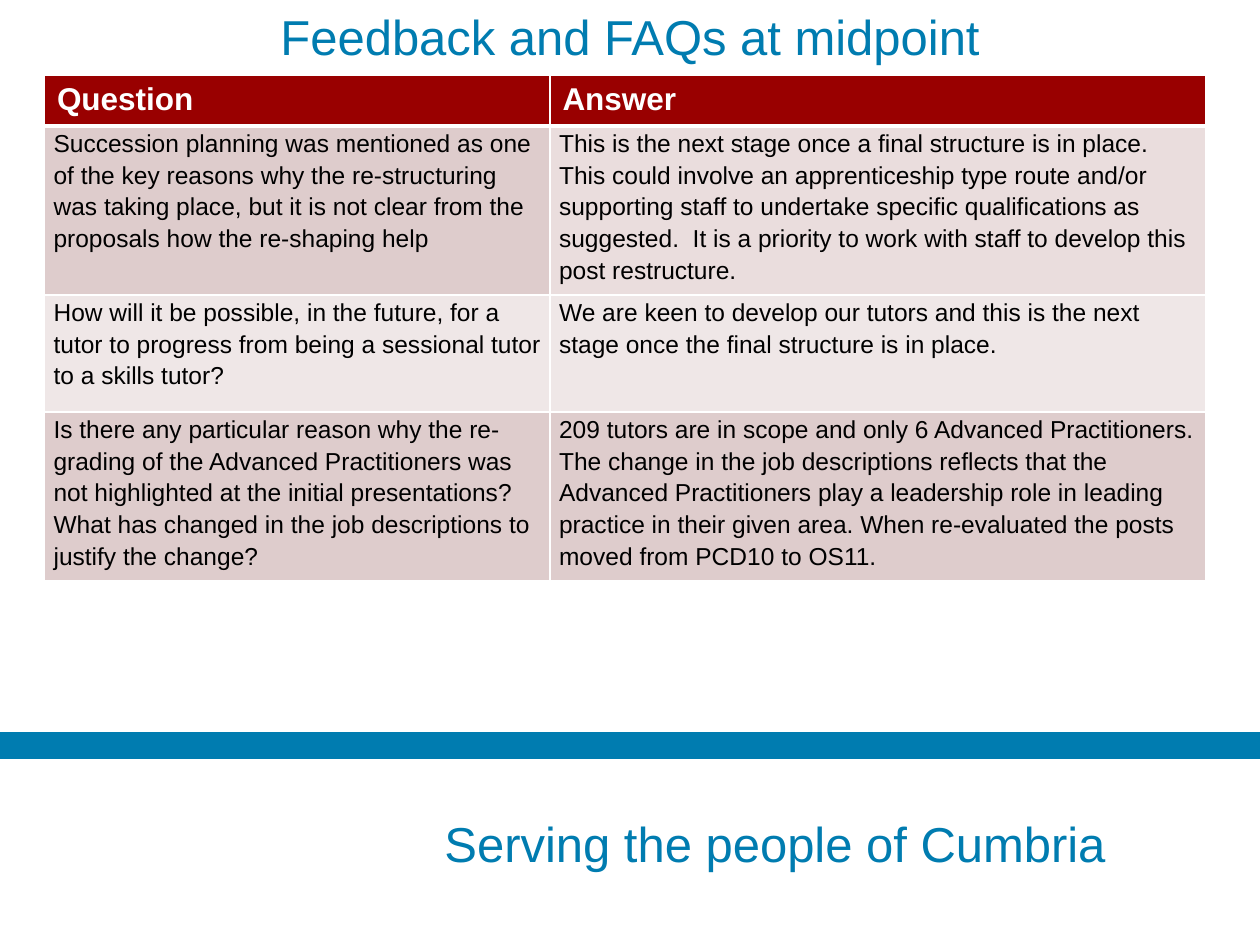
from dataclasses import dataclass

from lxml.etree import SubElement
from pptx import Presentation
from pptx.dml.color import RGBColor as RGB
from pptx.enum.shapes import MSO_CONNECTOR as CONN
from pptx.enum.text import MSO_ANCHOR as ANCHOR, MSO_AUTO_SIZE as AUTO, PP_ALIGN as ALIGN
from pptx.oxml import parse_xml
from pptx.oxml.ns import nsdecls, qn
from pptx.util import Cm, Pt


@dataclass(frozen=True)
class Theme:
    """Colours, font and type sizes of the slide."""
    font: str = "Arial"
    blue: str = "007CB0"
    red: str = "990000"
    white: str = "FFFFFF"
    black: str = "000000"
    rose: str = "DECCCC"
    blush: str = "EADDDD"
    pale: str = "EFE7E7"
    title: int = 28
    head: int = 18
    body: int = 14


ROWS = [
    ("Question", "Answer"),
    ("Succession planning was mentioned as one of the key reasons why the re-structuring was taking "
     "place, but it is not clear from the proposals how the re-shaping help",
     "This is the next stage once a final structure is in place.  This could involve an "
     "apprenticeship type route and/or supporting staff to undertake specific qualifications as "
     "suggested.  It is a priority to work with staff to develop this post restructure."),
    ("How will it be possible, in the future, for a tutor to progress from being a sessional tutor "
     "to a skills tutor?",
     "We are keen to develop our tutors and this is the next stage once the final structure is in "
     "place."),
    ("Is there any particular reason why the re-grading of the Advanced Practitioners was not "
     "highlighted at the initial presentations? What has changed in the job descriptions to justify "
     "the change?",
     "209 tutors are in scope and only 6 Advanced Practitioners. The change in the job descriptions "
     "reflects that the Advanced Practitioners play a leadership role in leading practice in their "
     "given area. When re-evaluated the posts moved from PCD10 to OS11."),
]


class Deck:
    """Holds the theme and the current slide."""

    def __init__(self, prs, theme):
        """Start a title-only slide."""
        self.t = theme
        self.s = prs.slides.add_slide(prs.slide_layouts[5])

    def para(self, tf, text, size, color, bold=False, **formats):
        """Put one formatted paragraph in a text frame."""
        p = tf.paragraphs[0]
        for name, value in formats.items():
            setattr(p, name, value)
        r = p.add_run()
        r.text = text
        r.font.color.rgb = RGB.from_string(color)
        for name, value in {"name": self.t.font, "size": Pt(size), "bold": bold}.items():
            setattr(r.font, name, value)

    def title(self, text, left, top, width, height):
        """Place and fill the title placeholder."""
        sp = self.s.shapes.title
        box = {"left": left, "top": top, "width": width, "height": height}
        for name, value in box.items():
            setattr(sp, name, Cm(value))
        tf = sp.text_frame
        for name, value in {"auto_size": AUTO.NONE, "vertical_anchor": ANCHOR.MIDDLE}.items():
            setattr(tf, name, value)
        self.para(tf, text, self.t.title, self.t.blue, alignment=ALIGN.CENTER)

    def text(self, text, *box):
        """Add a wrapped text box."""
        tf = self.s.shapes.add_textbox(*map(Cm, box)).text_frame
        for name, value in {"word_wrap": True, "auto_size": AUTO.SHAPE_TO_FIT_TEXT}.items():
            setattr(tf, name, value)
        self.para(tf, text, self.t.title, self.t.blue)

    def band(self, y, width, weight):
        """Draw a thick horizontal line."""
        c = self.s.shapes.add_connector(CONN.STRAIGHT, Cm(0), Cm(y), Cm(width), Cm(y))
        c.line.color.rgb = RGB.from_string(self.t.blue)
        c.line.width = Pt(weight)
        SubElement(c.element.spPr, qn("a:effectLst"))

    def borders(self, cell, **weights):
        """Give a cell white borders, one point unless stated."""
        tc_pr = cell._tc.get_or_add_tcPr()
        for i, side in enumerate("LRTB"):
            tc_pr.insert(i, parse_xml(
                f'<a:ln{side} {nsdecls("a")} w="{Pt(weights.get(side, 1))}"><a:solidFill>'
                f'<a:srgbClr val="{self.t.white}"/></a:solidFill></a:ln{side}>'))

    def cell(self, cell, text, fill, head):
        """Fill and format one table cell."""
        t = self.t
        x, y = (0.25, 0.13) if head else (0.18, 0)
        margins = {"margin_left": x, "margin_right": x, "margin_top": y, "margin_bottom": y}
        for name, value in margins.items():
            setattr(cell, name, Cm(value))
        cell.fill.solid()
        cell.fill.fore_color.rgb = RGB.from_string(fill)
        if head:
            self.para(cell.text_frame, text, t.head, t.white, bold=True)
        else:
            self.para(cell.text_frame, text, t.body, t.black, line_spacing=1.15)

    def table(self, rows, fills, left, top, widths, heights):
        """Add a table with a heavier rule under its header."""
        box = map(Cm, (left, top, sum(widths), sum(heights)))
        tbl = self.s.shapes.add_table(len(rows), len(widths), *box).table
        for col, width in zip(tbl.columns, widths):
            col.width = Cm(width)
        for i, (row, height) in enumerate(zip(tbl.rows, heights)):
            row.height = Cm(height)
            for cell, text, fill in zip(row.cells, rows[i], fills[i]):
                self.cell(cell, text, fill, head=i == 0)
                self.borders(cell, **{0: {"B": 3}, 1: {"T": 3}}.get(i, {}))


def main():
    """Build and save the slide."""
    prs = Presentation()
    prs.slide_width, prs.slide_height = Cm(25.4), Cm(19.05)
    t = Theme()
    d = Deck(prs, t)
    d.band(15.03, 25.4, 15)
    d.text("Serving the people of Cumbria", 8.71, 16.28, 15.01, 1.45)
    d.title("Feedback and FAQs at midpoint", 1.9, 0.13, 21.6, 1.2)
    fills = [(t.red, t.red), (t.rose, t.blush), (t.pale, t.pale), (t.rose, t.rose)]
    d.table(ROWS, fills, 0.9, 1.52, (10.19, 13.21), (1.02, 3.4, 2.36, 3.4))
    prs.save("out.pptx")


if __name__ == "__main__":
    main()
